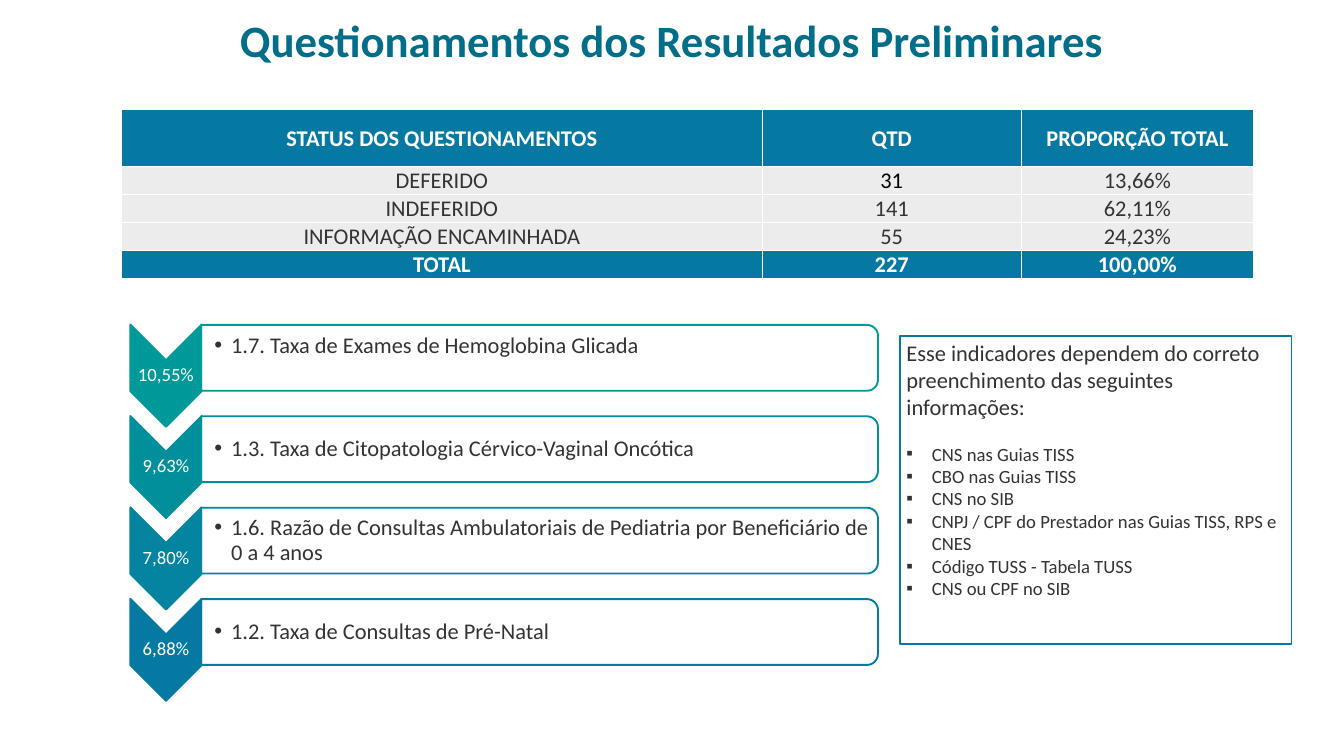
from lxml import etree
from pptx import Presentation
from pptx.dml.color import RGBColor
from pptx.enum.shapes import MSO_SHAPE
from pptx.enum.text import MSO_ANCHOR, PP_ALIGN
from pptx.oxml.ns import qn
from pptx.util import Inches, Pt

CHEVRON = MSO_SHAPE.CHEVRON
ROUND_TOP = MSO_SHAPE.ROUND_2_SAME_RECTANGLE
RECTANGLE = MSO_SHAPE.RECTANGLE
TOP, MIDDLE = MSO_ANCHOR.TOP, MSO_ANCHOR.MIDDLE
LEFT, CENTER = PP_ALIGN.LEFT, PP_ALIGN.CENTER

COLORS = {
    "title": "006E89", "blue": "0679A3", "text": "333333",
    "black": "000000", "white": "FFFFFF", "band": "ECECEC",
}

STATUS_ROWS = [
    ("STATUS DOS QUESTIONAMENTOS", "QTD", "PROPORÇÃO TOTAL"),
    ("DEFERIDO", "31", "13,66%"),
    ("INDEFERIDO", "141", "62,11%"),
    ("INFORMAÇÃO ENCAMINHADA", "55", "24,23%"),
    ("TOTAL", "227", "100,00%"),
]
# Share, indicator, colour, bottom inset of the indicator text
INDICATORS = [
    ("10,55%", "1.7. Taxa de Exames de Hemoglobina Glicada", "009999", 0.38),
    ("9,63%", "1.3. Taxa de Citopatologia Cérvico-Vaginal Oncótica", "028F9C", 0.02),
    ("7,80%", "1.6. Razão de Consultas Ambulatoriais de Pediatria por "
              "Beneficiário de 0 a 4 anos", "0484A0", 0.02),
    ("6,88%", "1.2. Taxa de Consultas de Pré-Natal", "0679A3", 0.02),
]
NOTE_INTRO = ["Esse indicadores dependem do correto",
              "preenchimento das seguintes informações:"]
NOTE_ITEMS = ["CNS nas Guias TISS", "CBO nas Guias TISS", "CNS no SIB",
              "CNPJ / CPF do Prestador nas Guias TISS, RPS e CNES",
              "Código TUSS - Tabela TUSS", "CNS ou CPF no SIB"]


class SlideBuilder:
    font = "Calibri"

    def __init__(self, deck):
        self.slide = deck.slides.add_slide(deck.slide_layouts[5])

    def color(self, value):
        return RGBColor.from_string(COLORS.get(value, value))

    def frame(self, frame, insets, anchor):
        frame.word_wrap = True
        frame.vertical_anchor = anchor
        (frame.margin_left, frame.margin_top,
         frame.margin_right, frame.margin_bottom) = map(Inches, insets)

    def add_span(self, para, text, size, color, bold=False, align=LEFT,
                 bullet=None, indent=0):
        if bullet:
            properties = para._p.get_or_add_pPr()
            properties.set("marL", str(Inches(indent)))
            properties.set("indent", str(-Inches(indent)))
            etree.SubElement(properties, qn("a:buFont")).set("typeface", "Arial")
            etree.SubElement(properties, qn("a:buChar")).set("char", bullet)
        para.alignment = align
        span = para.add_run()
        span.text = text
        span.font.name = self.font
        span.font.size = Pt(size)
        span.font.bold = bold
        span.font.color.rgb = self.color(color)

    def title(self, text):
        box = self.slide.shapes.title
        box.left, box.top = Inches(0.31), Inches(0.13)
        box.width, box.height = Inches(19.37), Inches(0.93)
        self.frame(box.text_frame, (0.1, 0.05, 0.1, 0.05), MIDDLE)
        self.add_span(box.text_frame.paragraphs[0], text, 48, "title", True, CENTER)

    def shape(self, kind, left, top, width, height, fill, line, rotation=0, alpha=None):
        shape = self.slide.shapes.add_shape(
            kind, Inches(left), Inches(top), Inches(width), Inches(height))
        shape.rotation = rotation
        shape.shadow.inherit = False
        shape.fill.solid()
        shape.fill.fore_color.rgb = self.color(fill)
        if alpha:
            tint = shape._element.spPr.find(qn("a:solidFill"))[0]
            etree.SubElement(tint, qn("a:alpha")).set("val", str(alpha * 1000))
        shape.line.color.rgb = self.color(line)
        shape.line.width = Pt(2)
        return shape

    def text(self, left, top, width, height, text, size, color, insets, **style):
        box = self.slide.shapes.add_textbox(
            Inches(left), Inches(top), Inches(width), Inches(height))
        self.frame(box.text_frame, insets, MIDDLE)
        para = box.text_frame.paragraphs[0]
        para.line_spacing = 0.9
        self.add_span(para, text, size, color, **style)

    def cell_borders(self, cell):
        properties = cell._tc.get_or_add_tcPr()
        for index, side in enumerate(("lnL", "lnR", "lnT", "lnB")):
            line = etree.Element(qn(f"a:{side}"), w=str(Pt(1)))
            fill = etree.SubElement(line, qn("a:solidFill"))
            etree.SubElement(fill, qn("a:srgbClr")).set("val", COLORS["white"])
            properties.insert(index, line)

    def table(self, left, top, widths, heights, rows):
        table = self.slide.shapes.add_table(
            len(rows), len(widths), Inches(left), Inches(top),
            Inches(sum(widths)), Inches(sum(heights))).table
        table.horz_banding = False
        for column, width in zip(table.columns, widths):
            column.width = Inches(width)
        for index, (row, height) in enumerate(zip(table.rows, heights)):
            row.height = Inches(height)
            strong = index in (0, len(rows) - 1)
            for cell, text in zip(row.cells, rows[index]):
                cell.fill.solid()
                cell.fill.fore_color.rgb = self.color("blue" if strong else "band")
                self.cell_borders(cell)
                cell.vertical_anchor = MIDDLE
                cell.margin_left = cell.margin_right = cell.margin_top = Inches(0.01)
                cell.margin_bottom = 0
                color = "white" if strong else "black" if text == "31" else "text"
                self.add_span(cell.text_frame.paragraphs[0], text, 24, color,
                              strong, CENTER)

    def indicator(self, top, share, name, color, bottom_inset):
        self.shape(CHEVRON, 1.71, top, 1.52, 1.06, color, color, 90)
        self.text(1.94, top + 0.3, 1.06, 0.45, share, 20, "white",
                  (0.01,) * 4, align=CENTER)
        self.shape(ROUND_TOP, 7.54, top - 4.77, 0.98, 10.07, "white", color, 90, 90)
        self.text(3, top - 0.18, 10.03, 0.89, name, 24, "text",
                  (0.19, 0.02, 0.02, bottom_inset), bullet="•", indent=0.25)

    def note(self, left, top, width, height, intro, items):
        box = self.shape(RECTANGLE, left, top, width, height, "white", "blue")
        frame = box.text_frame
        self.frame(frame, (0.1, 0.05, 0.1, 0.05), TOP)
        for index, text in enumerate(intro):
            para = frame.add_paragraph() if index else frame.paragraphs[0]
            self.add_span(para, text, 24, "text")
        for index, text in enumerate(items):
            para = frame.add_paragraph()
            if index == 0:
                para.space_before = Pt(24)
            self.add_span(para, text, 20, "text", bullet="▪", indent=0.38)


def main():
    deck = Presentation()
    deck.slide_width, deck.slide_height = Inches(20), Inches(11.25)
    page = SlideBuilder(deck)

    # Title and status table
    page.title("Questionamentos dos Resultados Preliminares")
    page.table(1.81, 1.63, (9.53, 3.86, 3.45), (0.85,) + (0.41,) * 4, STATUS_ROWS)

    # Indicators with their shares
    for index, indicator in enumerate(INDICATORS):
        page.indicator(5.06 + 1.36 * index, *indicator)

    # Information needed
    page.note(13.39, 5, 5.83, 4.58, NOTE_INTRO, NOTE_ITEMS)

    deck.save("out.pptx")


if __name__ == "__main__":
    main()
